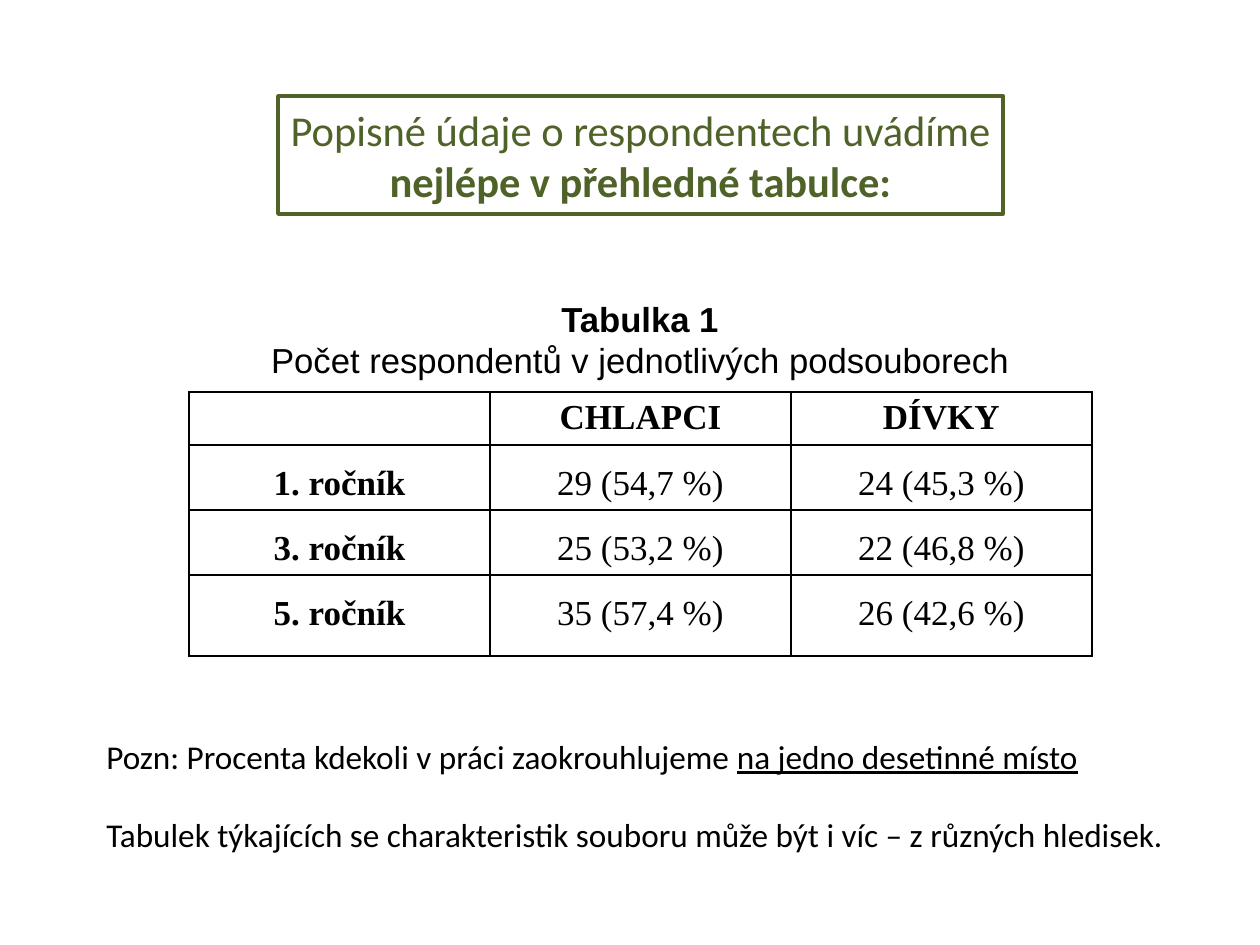
import pptx
import pptx.dml.color
import pptx.enum.shapes
import pptx.enum.text
import pptx.oxml
import pptx.oxml.ns
import pptx.util

PX = 914400 // 126
BLACK, GREEN = "000000", "4F6228"
CENTER = pptx.enum.text.PP_ALIGN.CENTER
LEFT = pptx.enum.text.PP_ALIGN.LEFT
MIDDLE = pptx.enum.text.MSO_ANCHOR.MIDDLE

HEADING = [[("Popisné údaje o respondentech uvádíme", {})],
           [("nejlépe v přehledné tabulce:", {"bold": True})]]
CAPTION = [[("Tabulka 1", {"bold": True})],
           [("Počet respondentů v jednotlivých podsouborech", {})]]
NOTES = [[("Pozn: Procenta kdekoli v práci zaokrouhlujeme ", {}),
          ("na jedno desetinné místo", {"underline": True})],
         [("Tabulek týkajících se charakteristik souboru může být i víc"
           " – z různých hledisek.", {})]]
ROWS = [("", "CHLAPCI", "DÍVKY"),
        ("1. ročník", "29 (54,7 %)", "24 (45,3 %)"),
        ("3. ročník", "25 (53,2 %)", "22 (46,8 %)"),
        ("5. ročník", "35 (57,4 %)", "26 (42,6 %)")]
ROW_HEIGHTS = [53, 65, 65, 81]
COLUMN_WIDTH = 301


def color(value):
    return pptx.dml.color.RGBColor.from_string(value)


def px(*lengths):
    return [length * PX for length in lengths]


def set_values(target, values):
    for name, value in values.items():
        setattr(target, name, value)


def write(frame, paragraphs, font, size, ink, **paragraph_format):
    """Fill a text frame with paragraphs, each a list of (text, font values)."""
    for index, spans in enumerate(paragraphs):
        para = frame.add_paragraph() if index else frame.paragraphs[0]
        set_values(para, paragraph_format)
        if index == 0:
            para.space_before = pptx.util.Pt(0)
        for text, values in spans:
            span = para.add_run()
            span.text = text
            set_values(span.font, {"name": font, "size": pptx.util.Pt(size), **values})
            span.font.color.rgb = color(ink)


def add_text(page, place, paragraphs, font, size, **paragraph_format):
    frame = page.shapes.add_textbox(*px(*place)).text_frame
    set_values(frame, {"word_wrap": True, "vertical_anchor": MIDDLE})
    write(frame, paragraphs, font, size, BLACK, **paragraph_format)


def add_heading(page):
    box = page.shapes.add_shape(pptx.enum.shapes.MSO_SHAPE.RECTANGLE,
                                *px(278, 96, 725, 118))
    box.shadow.inherit = False
    box.fill.background()
    box.line.color.rgb = color(GREEN)
    box.line.width = pptx.util.Pt(2)
    set_values(box.text_frame, {
        "word_wrap": True, "vertical_anchor": MIDDLE, "margin_left": 0,
        "margin_right": 0, "margin_top": 0, "margin_bottom": 0})
    write(box.text_frame, HEADING, "Calibri", 24.3, GREEN, alignment=CENTER)


def add_borders(cell):
    properties = cell._tc.get_or_add_tcPr()
    namespace = pptx.oxml.ns.nsdecls("a")
    for index, side in enumerate(("lnL", "lnR", "lnT", "lnB")):
        properties.insert(index, pptx.oxml.parse_xml(
            f'<a:{side} {namespace} w="12700"><a:solidFill>'
            f'<a:srgbClr val="{BLACK}"/></a:solidFill></a:{side}>'))


def add_respondent_table(page):
    columns = len(ROWS[0])
    table = page.shapes.add_table(
        len(ROWS), columns,
        *px(189, 392, columns * COLUMN_WIDTH, sum(ROW_HEIGHTS))).table
    set_values(table, {"first_row": False, "horz_banding": False})
    for column in table.columns:
        column.width = COLUMN_WIDTH * PX
    for row_index, (texts, height) in enumerate(zip(ROWS, ROW_HEIGHTS)):
        table.rows[row_index].height = height * PX
        for column_index, text in enumerate(texts):
            cell = table.cell(row_index, column_index)
            cell.fill.background()
            set_values(cell, {"margin_left": 9 * PX, "margin_right": 9 * PX,
                              "margin_top": 0, "margin_bottom": 0})
            is_label = row_index == 0 or column_index == 0
            spans = [(text, {"bold": is_label})] if text else []
            write(cell.text_frame, [spans], "Times New Roman", 20, BLACK,
                  alignment=CENTER, line_spacing=1.5 if row_index else 1.15)
            add_borders(cell)


def main():
    deck = pptx.Presentation()
    deck.slide_width, deck.slide_height = px(1260, 945)
    page = deck.slides.add_slide(deck.slide_layouts[6])
    add_heading(page)
    add_text(page, (54, 293, 1172, 92), CAPTION, "Arial", 19.8, alignment=CENTER)
    add_respondent_table(page)
    add_text(page, (94, 701, 1111, 189), NOTES, "Calibri", 19,
             alignment=LEFT, space_before=pptx.util.Pt(22))
    deck.save("out.pptx")


if __name__ == "__main__":
    main()
